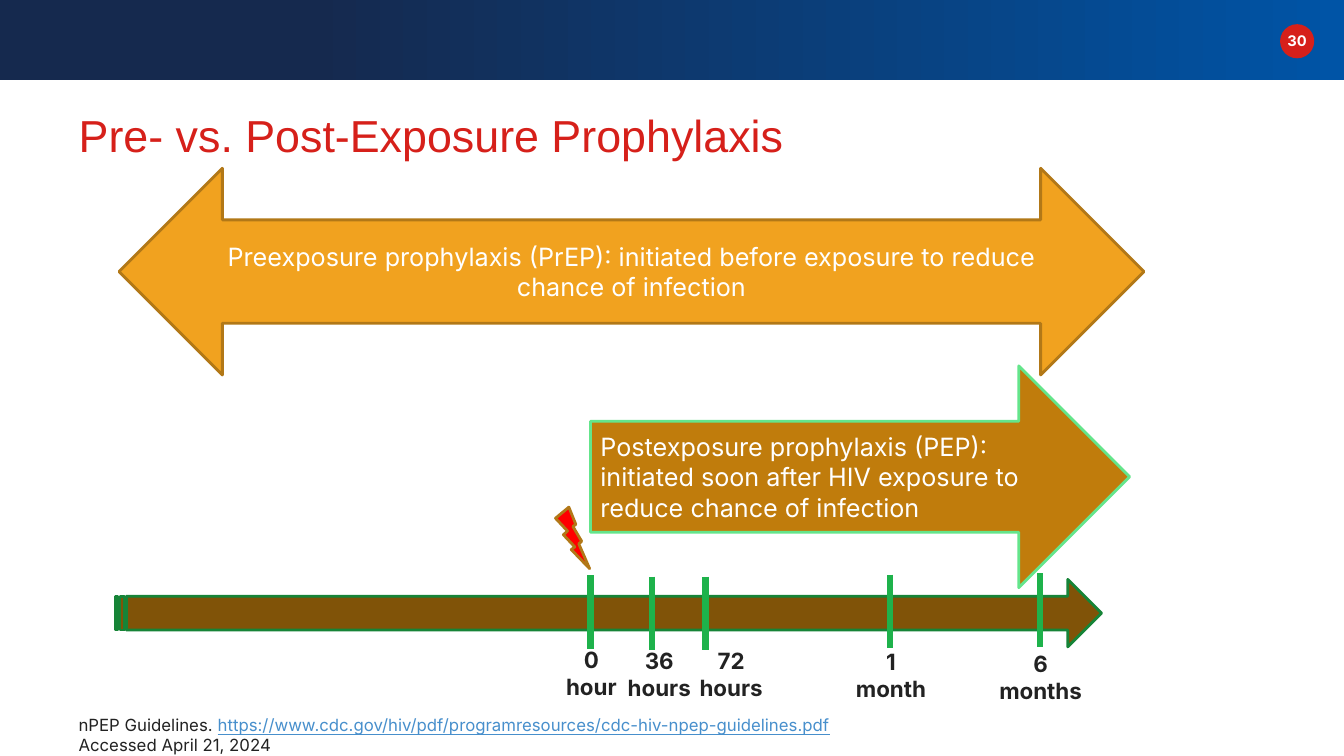
"""Build the slide on pre- and post-exposure prophylaxis."""
import pptx
import pptx.util
import pptx.dml.color
import pptx.enum.shapes
import pptx.enum.text
import pptx.oxml.ns
from lxml import etree

Cm, Pt = pptx.util.Cm, pptx.util.Pt
RGBColor = pptx.dml.color.RGBColor
KIND = pptx.enum.shapes.MSO_SHAPE
ALIGN = pptx.enum.text.PP_ALIGN
MID = pptx.enum.text.MSO_ANCHOR.MIDDLE

NAVY = RGBColor(0x15, 0x29, 0x4E)
BLUE = RGBColor(0x00, 0x54, 0xA6)
CRIMSON = RGBColor(0xD6, 0x20, 0x1A)
RED = RGBColor(0xFF, 0x00, 0x00)
WHITE = RGBColor(0xFF, 0xFF, 0xFF)
INK = RGBColor(0x22, 0x22, 0x22)
LINK = RGBColor(0x47, 0x8F, 0xCC)
GOLD = RGBColor(0xF1, 0xA2, 0x1F)
BRONZE = RGBColor(0xB2, 0x78, 0x17)
OCHRE = RGBColor(0xC0, 0x7C, 0x0C)
BROWN = RGBColor(0x80, 0x53, 0x08)
MINT = RGBColor(0x64, 0xE5, 0x8B)
GREEN = RGBColor(0x1E, 0xB2, 0x4B)
FOREST = RGBColor(0x16, 0x84, 0x37)

TITLE = "Pre- vs. Post-Exposure Prophylaxis"
PAGE = "30"
PREP = "Preexposure prophylaxis (PrEP): initiated before exposure to reduce chance of infection"
PEP = "Postexposure prophylaxis (PEP): initiated soon after HIV exposure to reduce chance of infection"
NOTE = [
    ("nPEP Guidelines. ", INK, False),
    ("https://www.cdc.gov/hiv/pdf/programresources/cdc-hiv-npep-guidelines.pdf", LINK, True),
    (" Accessed April 21, 2024", INK, False),
]
ARROWS = [
    (KIND.STRIPED_RIGHT_ARROW, (2.92, 14.6, 24.84, 1.7), BROWN, FOREST, None, None),
    (KIND.LEFT_RIGHT_ARROW, (3, 4.24, 25.83, 5.21), GOLD, BRONZE, PREP, ALIGN.CENTER),
    (KIND.RIGHT_ARROW, (14.88, 9.22, 13.59, 5.59), OCHRE, MINT, PEP, ALIGN.LEFT),
]
TICKS = [(14.88, 14.5), (16.43, 14.53), (17.78, 14.53), (22.43, 14.48), (26.21, 14.45)]
RISE = 1.86
TIMES = [
    ("0", "hour", (13.89, 16.15, 2.03, 1.63)),
    ("36", "hours", (15.42, 16.18, 2.39, 1.63)),
    ("72", "hours", (17.32, 16.18, 2.21, 1.63)),
    ("1", "month", (21.26, 16.21, 2.39, 1.63)),
    ("6", "months", (24.89, 16.26, 2.67, 1.63)),
]


def style(para, size, color, align=ALIGN.LEFT, bold=False, face="Inter"):
    """Set the font and alignment of a paragraph."""
    para.alignment = align
    font = para.font
    font.name, font.size, font.bold = face, Pt(size), bold
    font.color.rgb = color


def draw(slide, kind, box, fill=None, edge=None):
    """Add a flat preset shape."""
    shape = slide.shapes.add_shape(kind, *map(Cm, box))
    shape.shadow.inherit = False
    if fill is not None:
        shape.fill.solid()
        shape.fill.fore_color.rgb = fill
    if edge is None:
        shape.line.fill.background()
    else:
        shape.line.color.rgb = edge
        shape.line.width = Pt(2)
    return shape


def write(slide, box, lines, size, color, align=ALIGN.LEFT, bold=False):
    """Add a wrapped text box and return its frame."""
    frame = slide.shapes.add_textbox(*map(Cm, box)).text_frame
    frame.word_wrap = True
    frame.text = "\n".join(lines)
    for para in frame.paragraphs:
        style(para, size, color, align, bold)
    return frame


def main():
    """Build and save the slide."""
    deck = pptx.Presentation()
    deck.slide_width, deck.slide_height = Cm(33.87), Cm(19.05)
    slide = deck.slides.add_slide(deck.slide_layouts[5])

    band = draw(slide, KIND.RECTANGLE, (0, 0, 33.87, 2.03))
    band.fill.gradient()
    band.fill.gradient_angle = 0
    for stop, place, color in zip(band.fill.gradient_stops, (0.23, 1), (NAVY, BLUE)):
        stop.position = place
        stop.color.rgb = color
    draw(slide, KIND.OVAL, (32.26, 0.61, 0.86, 0.86), CRIMSON)
    write(slide, (32.13, 0.69, 1.12, 0.71), [PAGE], 10.5, WHITE, ALIGN.CENTER, True)

    title = slide.shapes.title
    title.left, title.top, title.width, title.height = map(Cm, (1.73, 2.49, 29.21, 1.8))
    title.text_frame.text = TITLE
    title.text_frame.vertical_anchor = MID
    style(title.text_frame.paragraphs[0], 32, CRIMSON, face="Arial")

    note = write(slide, (1.73, 17.88, 21.06, 0.76), [], 12, INK).paragraphs[0]
    for words, color, under in NOTE:
        run = note.add_run()
        run.text = words
        run.font.color.rgb = color
        run.font.underline = under

    for kind, box, fill, edge, words, align in ARROWS:
        arrow = draw(slide, kind, box, fill, edge)
        if words:
            arrow.text_frame.text = words
            arrow.text_frame.word_wrap = True
            arrow.text_frame.vertical_anchor = MID
            style(arrow.text_frame.paragraphs[0], 18, WHITE, align)

    for x, top in TICKS:
        tick = slide.shapes.add_connector(
            pptx.enum.shapes.MSO_CONNECTOR.STRAIGHT, Cm(x), Cm(top), Cm(x), Cm(top + RISE))
        tick.line.color.rgb = GREEN
        tick.line.width = Pt(4.5)
        etree.SubElement(tick._element.spPr, pptx.oxml.ns.qn("a:effectLst"))

    for count, unit, box in TIMES:
        write(slide, box, [count, unit], 16, INK, ALIGN.CENTER, True)
    draw(slide, KIND.LIGHTNING_BOLT, (14, 12.78, 0.86, 1.55), RED, BRONZE)
    deck.save("out.pptx")


if __name__ == "__main__":
    main()
